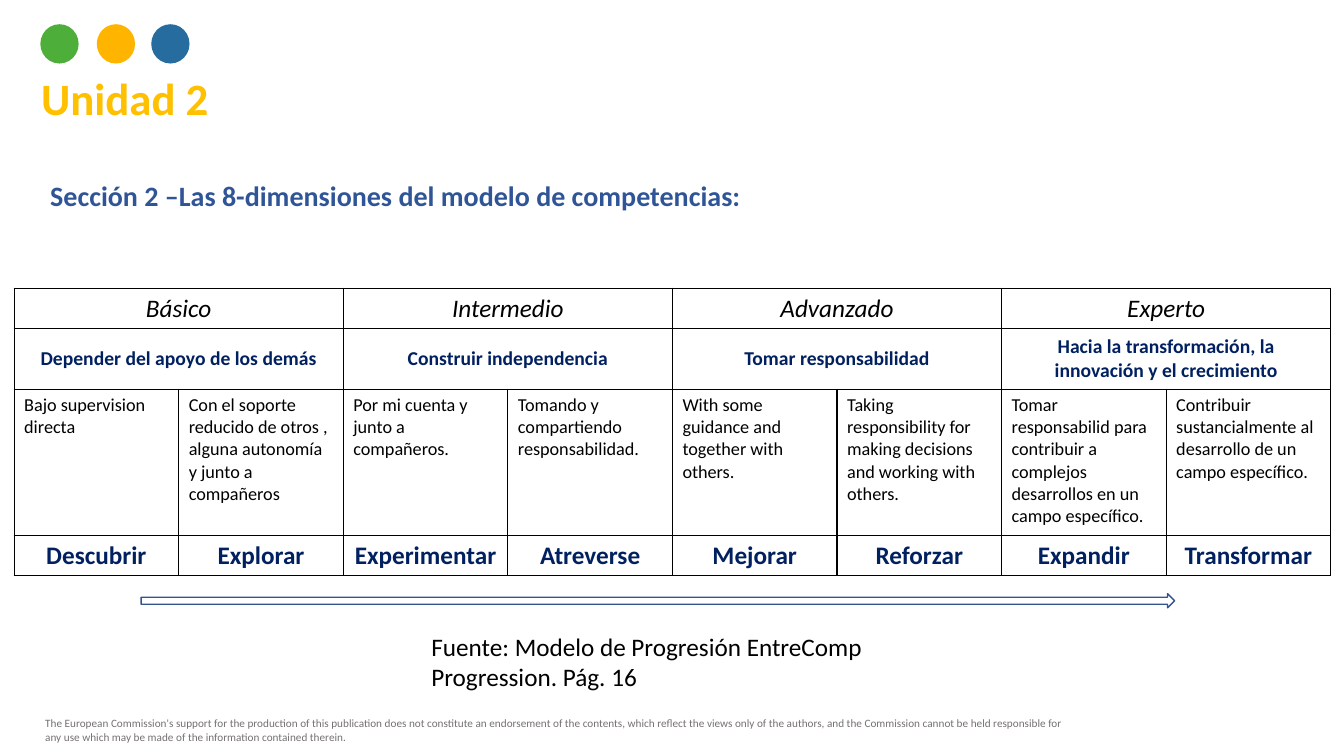
from dataclasses import dataclass

from lxml.etree import SubElement
from pptx import Presentation
from pptx.dml.color import RGBColor
from pptx.enum.shapes import MSO_SHAPE
from pptx.enum.text import MSO_ANCHOR, MSO_AUTO_SIZE, PP_ALIGN
from pptx.oxml import parse_xml
from pptx.oxml.ns import nsdecls, qn
from pptx.util import Inches, Pt


@dataclass(frozen=True)
class Theme:
    font: str = "Calibri"
    black: str = "000000"
    navy: str = "002060"
    blue: str = "2F5597"
    arrow: str = "325491"
    gold: str = "FFC000"
    grey: str = "767171"
    dots: tuple = ("4EAE3A", "FFB500", "266C9F")
    title: int = 32
    section: int = 20
    level: int = 18
    stage: int = 14
    detail: int = 13
    disclaimer: int = 8


THEME = Theme()

LEVELS = ["Básico", "Intermedio", "Advanzado", "Experto"]
STAGES = [
    "Depender del apoyo de los demás",
    "Construir independencia",
    "Tomar responsabilidad",
    "Hacia la transformación, la innovación y el crecimiento",
]
DETAILS = [
    "Bajo supervision directa",
    "Con el soporte reducido de otros , alguna autonomía y junto a compañeros",
    "Por mi cuenta y junto a compañeros.",
    "Tomando y compartiendo responsabilidad.",
    "With some guidance and together with others.",
    "Taking responsibility for making decisions and working with others.",
    "Tomar responsabilid para contribuir a complejos desarrollos en un campo específico.",
    "Contribuir sustancialmente al desarrollo de un campo específico.",
]
ACTIONS = [
    "Descubrir", "Explorar", "Experimentar", "Atreverse",
    "Mejorar", "Reforzar", "Expandir", "Transformar",
]
DISCLAIMER = (
    "The European Commission's support for the production of this publication does not "
    "constitute an endorsement of the contents, which reflect the views only of the authors, "
    "and the Commission cannot be held responsible for any use which may be made of the "
    "information contained therein."
)


def write_text(text_frame, text, size, color, align=PP_ALIGN.LEFT, **font_format):
    paragraph = text_frame.paragraphs[0]
    paragraph.alignment = align
    run = paragraph.add_run()
    run.text = text
    values = {"name": THEME.font, "size": Pt(size), "bold": False, "italic": False}
    for name, value in (values | font_format).items():
        setattr(run.font, name, value)
    run.font.color.rgb = RGBColor.from_string(color)


def add_text(slide, box, text, size, color, **text_format):
    text_frame = slide.shapes.add_textbox(*map(Inches, box)).text_frame
    text_frame.word_wrap = True
    text_frame.auto_size = MSO_AUTO_SIZE.SHAPE_TO_FIT_TEXT
    write_text(text_frame, text, size, color, **text_format)


def add_dot(slide, left, color):
    dot = slide.shapes.add_shape(
        MSO_SHAPE.OVAL, Inches(left), Inches(0.24), Inches(0.38), Inches(0.39))
    dot.shadow.inherit = False
    dot.fill.solid()
    dot.fill.fore_color.rgb = RGBColor.from_string(color)
    dot.line.fill.background()


def add_progress_arrow(slide, box):
    arrow = slide.shapes.add_shape(MSO_SHAPE.RIGHT_ARROW, *map(Inches, box))
    arrow.shadow.inherit = False
    arrow.fill.background()
    arrow.line.color.rgb = RGBColor.from_string(THEME.arrow)
    arrow.line.width = Pt(1)


def set_borders(cell):
    properties = cell._tc.get_or_add_tcPr()
    for index, side in enumerate(("lnL", "lnR", "lnT", "lnB")):
        border = parse_xml(f'<a:{side} {nsdecls("a")} w="{Pt(1)}"/>')
        fill = SubElement(border, qn("a:solidFill"))
        SubElement(fill, qn("a:srgbClr"), val=THEME.black)
        properties.insert(index, border)


def fill_row(table, row, texts, size, color, anchor=MSO_ANCHOR.TOP, **text_format):
    """Spread the texts evenly over the row, merging cells where they are fewer."""
    span = len(table.columns) // len(texts)
    for index, text in enumerate(texts):
        first = table.cell(row, index * span)
        if span > 1:
            first.merge(table.cell(row, index * span + span - 1))
        first.vertical_anchor = anchor
        write_text(first.text_frame, text, size, color, **text_format)


def add_competence_table(slide):
    heights = [0.4, 0.6, 1.45, 0.4]
    table = slide.shapes.add_table(
        len(heights), len(ACTIONS),
        Inches(0.14), Inches(2.86), Inches(13.06), Inches(sum(heights))).table
    table.first_row = False
    table.horz_banding = False
    for row, height in zip(table.rows, heights):
        row.height = Inches(height)
    for cell in table.iter_cells():
        cell.fill.background()
        set_borders(cell)

    center = PP_ALIGN.CENTER
    fill_row(table, 0, LEVELS, THEME.level, THEME.black, align=center, italic=True)
    fill_row(table, 1, STAGES, THEME.stage, THEME.navy, MSO_ANCHOR.MIDDLE,
             align=center, bold=True)
    fill_row(table, 2, DETAILS, THEME.detail, THEME.black)
    fill_row(table, 3, ACTIONS, THEME.level, THEME.navy, align=center, bold=True)


def main():
    presentation = Presentation()
    presentation.slide_width = Inches(13.33)
    presentation.slide_height = Inches(7.5)
    slide = presentation.slides.add_slide(presentation.slide_layouts[6])

    add_text(slide, (0.35, 7.06, 10.46, 0.37), DISCLAIMER, THEME.disclaimer, THEME.grey)
    add_text(slide, (0.31, 0.65, 2.07, 0.64), "Unidad 2", THEME.title, THEME.gold, bold=True)
    add_text(slide, (0.4, 1.72, 12.26, 0.44),
             "Sección 2 –Las 8-dimensiones del modelo de competencias:",
             THEME.section, THEME.blue, align=PP_ALIGN.JUSTIFY, bold=True)
    for left, color in zip((0.4, 0.96, 1.5), THEME.dots):
        add_dot(slide, left, color)
    add_competence_table(slide)
    add_text(slide, (4.18, 6.21, 4.97, 0.71),
             "Fuente: Modelo de Progresión EntreComp Progression. Pág. 16",
             THEME.level, THEME.black)
    add_progress_arrow(slide, (1.4, 5.89, 10.25, 0.14))

    presentation.save("out.pptx")


if __name__ == "__main__":
    main()
